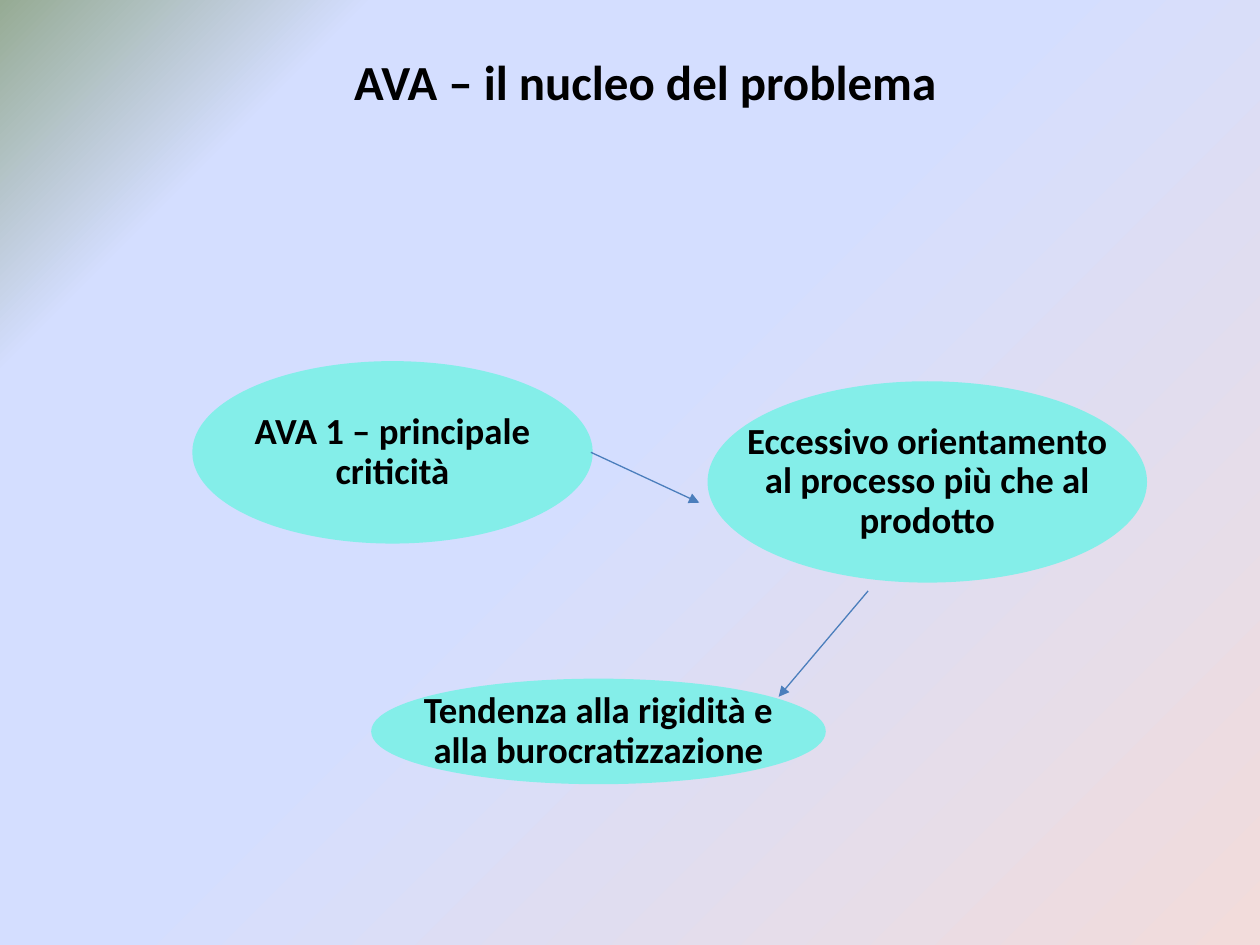
from pptx import Presentation
from pptx.dml.color import RGBColor
from pptx.enum.shapes import MSO_CONNECTOR, MSO_SHAPE
from pptx.enum.text import MSO_ANCHOR, PP_ALIGN
from pptx.oxml import parse_xml
from pptx.oxml.ns import nsdecls
from pptx.util import Inches, Pt

HUES = {"text": "000000", "oval": "84EEE9", "arrow": "4B7EBC"}
STOPS = [(0, "F2DCDB"), (53, "D4DEFF"), (83, "D4DEFF"), (100, "96AB94")]
TITLE = "AVA – il nucleo del problema"
OVALS = [
    ("AVA 1 – principale\vcriticità", (1.54, 2.88, 3.15, 1.42)),
    ("Eccessivo orientamento\val processo più che al\vprodotto", (5.63, 3.04, 3.46, 1.57)),
    ("Tendenza alla rigidità e\valla burocratizzazione", (2.96, 5.4, 3.58, 0.81)),
]
ARROWS = [(4.69, 3.59, 5.55, 3.99), (6.89, 4.69, 6.18, 5.53)]


def hue(name):
    return RGBColor.from_string(HUES[name])


def write(frame, text, size):
    frame.text = text
    frame.vertical_anchor = MSO_ANCHOR.MIDDLE
    para = frame.paragraphs[0]
    para.alignment = PP_ALIGN.CENTER
    font = para.font
    font.name, font.size, font.bold = "Calibri", Pt(size), True
    font.color.rgb = hue("text")
    return para


def paint(slide):
    slide.background.fill.solid()
    old = slide.element.xpath(".//p:bgPr/a:solidFill")[0]
    stops = "".join(
        f'<a:gs pos="{pos * 1000}"><a:srgbClr val="{code}"/></a:gs>'
        for pos, code in STOPS
    )
    grad = parse_xml(
        f'<a:gradFill {nsdecls("a")} rotWithShape="0"><a:gsLst>{stops}</a:gsLst>'
        '<a:path path="circle"><a:fillToRect l="100000" t="100000"/></a:path>'
        "</a:gradFill>"
    )
    old.getparent().replace(old, grad)


def add_oval(slide, text, box):
    oval = slide.shapes.add_shape(MSO_SHAPE.OVAL, *map(Inches, box))
    oval.shadow.inherit = False
    oval.fill.solid()
    oval.fill.fore_color.rgb = hue("oval")
    oval.line.color.rgb = hue("oval")
    oval.line.width = Pt(2)
    frame = oval.text_frame
    frame.word_wrap = False
    frame.margin_left = frame.margin_right = 0
    frame.margin_top = frame.margin_bottom = 0
    write(frame, text, 21).line_spacing = 0.9


def add_arrow(slide, ends):
    arrow = slide.shapes.add_connector(MSO_CONNECTOR.STRAIGHT, *map(Inches, ends))
    arrow.line.color.rgb = hue("arrow")
    arrow.line.width = Pt(0.75)
    arrow.line._get_or_add_ln().append(
        parse_xml(f'<a:tailEnd {nsdecls("a")} type="triangle"/>')
    )
    arrow.element.spPr.append(parse_xml(f'<a:effectLst {nsdecls("a")}/>'))


def main():
    deck = Presentation()
    deck.slide_width, deck.slide_height = Inches(10), Inches(7.5)
    slide = deck.slides.add_slide(deck.slide_layouts[5])
    paint(slide)
    title = slide.shapes.title
    title.left, title.top = Inches(0.75), Inches(0.21)
    title.width, title.height = Inches(8.74), Inches(0.87)
    write(title.text_frame, TITLE, 28)
    for text, box in OVALS:
        add_oval(slide, text, box)
    for ends in ARROWS:
        add_arrow(slide, ends)
    deck.save("out.pptx")


if __name__ == "__main__":
    main()
